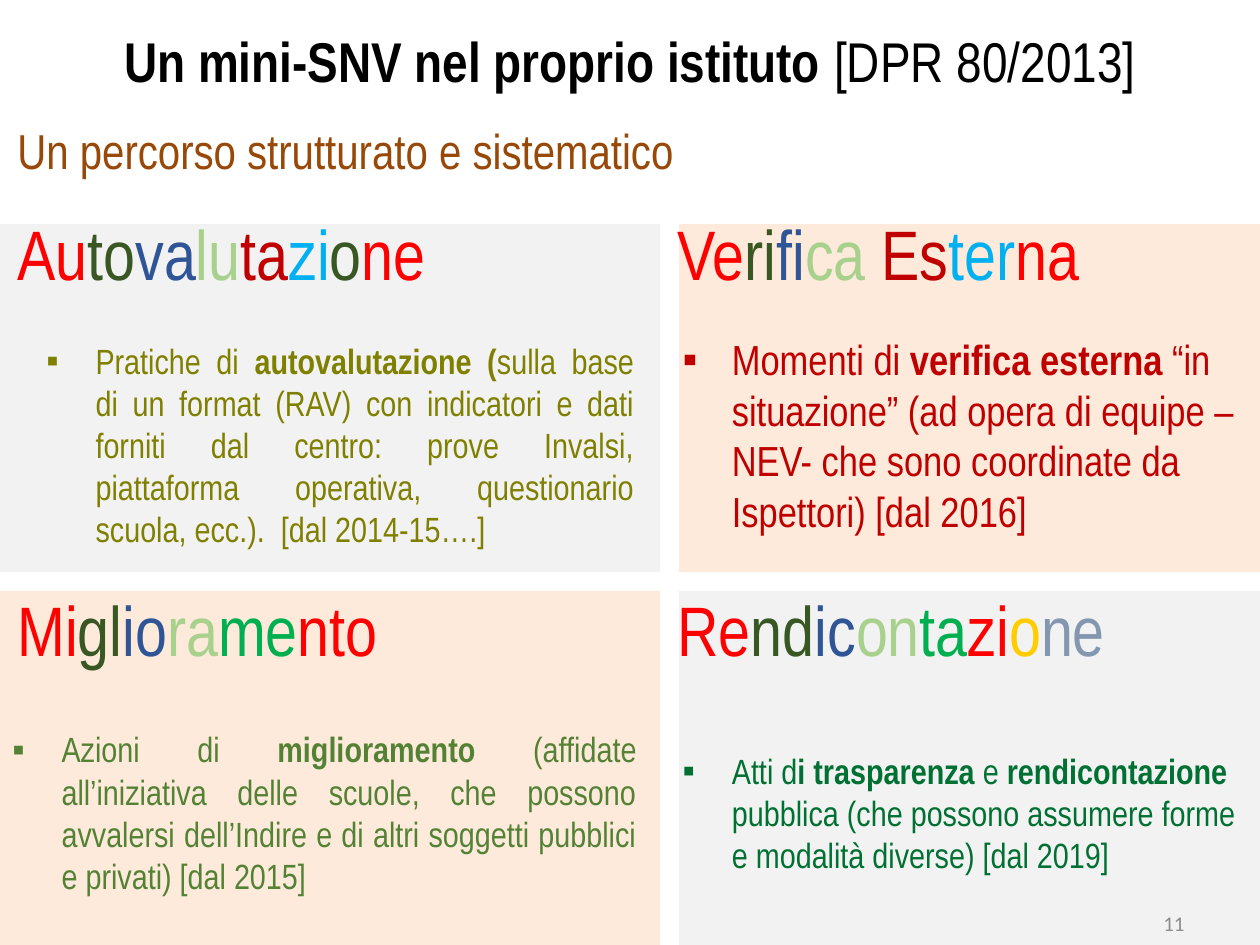
import pptx
import pptx.util
import pptx.dml.color
import pptx.enum.shapes
import pptx.enum.text
import pptx.oxml
import pptx.oxml.ns

Inch = pptx.util.Inches
Pt = pptx.util.Pt
ALIGN = pptx.enum.text.PP_ALIGN
ANCHOR = pptx.enum.text.MSO_ANCHOR

WIDE, HIGH, GAP = 10, 7.5, 0.15
TOP, LEFT, ROW = 1.78, 5.24, 2.76  # panel area top, first column, first row
GREY, PEACH = "F2F2F2", "FDEADA"
RED, PINE, NAVY, LIME = "FF0000", "385723", "2F5597", "A9D18E"
WINE, SKY, LEAF = "C00000", "00B0F0", "00B050"
HEAD = 0.77
NARROW = "Arial Narrow"

TITLE = [("Un mini-SNV nel proprio istituto ", True), ("[DPR 80/2013]", False)]
SUB = "Un percorso strutturato e sistematico"
PAGE = "11"

# Each panel: cell, heading pieces and colours, body box, body format, body runs
PANELS = [
    dict(cell=(0, 0), fill=GREY, head="Au|to|va|lu|ta|zi|o|ne",
         hues=[RED, PINE, NAVY, LIME, WINE, SKY, PINE, RED],
         box=(0.27, 2.47, 4.86, 2.12), size=20, hue="808000", align=ALIGN.JUSTIFY,
         body=[("Pratiche di ", False), ("autovalutazione (", True),
               ("sulla base di un format (RAV) con indicatori e dati forniti dal "
                "centro: prove Invalsi, piattaforma operativa, questionario scuola, "
                "ecc.).  [dal 2014-15….]", False)]),
    dict(cell=(1, 0), fill=PEACH, head="Ve|ri|fi|ca |Es|ter|na",
         hues=[RED, PINE, NAVY, LIME, WINE, SKY, RED],
         box=(5.32, 2.39, 4.57, 2.12), size=24, hue=WINE, align=ALIGN.LEFT,
         body=[("Momenti di ", False), ("verifica esterna", True),
               (" “in situazione” (ad opera di equipe –NEV- che sono coordinate da "
                "Ispettori) [dal 2016]", False)]),
    dict(cell=(0, 1), fill=PEACH, head="Mi|gl|io|ra|me|nto",
         hues=[RED, PINE, NAVY, LIME, LEAF, RED],
         box=(0, 5.73, 5.15, 1.43), size=20, hue="548235", align=ALIGN.JUSTIFY,
         body=[("Azioni di ", False), ("miglioramento ", True),
               ("(affidate all’iniziativa delle scuole, che possono avvalersi "
                "dell’Indire e di altri soggetti pubblici e privati) [dal 2015]", False)]),
    dict(cell=(1, 1), fill=GREY, head="Re|nd|ic|on|ta|zi|o|ne",
         hues=[RED, PINE, NAVY, LIME, LEAF, RED, "FFCC00", "8497B0"],
         box=(5.32, 5.73, 4.65, 1.43), size=20, hue="007033", align=ALIGN.LEFT,
         body=[("Atti d", False), ("i trasparenza", True), (" e ", False),
               ("rendicontazione", True),
               (" pubblica (che possono assumere forme e modalità diverse) [dal 2019]",
                False)]),
]


def rgb(code):
    return pptx.dml.color.RGBColor.from_string(code)


def write(slide, box, runs, size, align=ALIGN.LEFT, anchor=ANCHOR.TOP, face=NARROW):
    """Add a text box of (text, colour, bold) runs and return its paragraph."""
    frame = slide.shapes.add_textbox(*map(Inch, box)).text_frame
    for name, value in dict(word_wrap=True, vertical_anchor=anchor).items():
        setattr(frame, name, value)
    para = frame.paragraphs[0]
    para.alignment = align
    for text, hue, bold in runs:
        run = para.add_run()
        run.text = text
        for name, value in dict(name=face, size=Pt(size), bold=bold).items():
            setattr(run.font, name, value)
        run.font.color.rgb = rgb(hue)
    return para


def bullet(para):
    para.space_after = Pt(12)
    props = para._p.get_or_add_pPr()
    props.set("marL", str(Inch(0.39)))
    props.set("indent", str(Inch(-0.39)))
    for tag, key, value in [("buFont", "typeface", "Arial"), ("buChar", "char", "▪")]:
        item = pptx.oxml.parse_xml(f'<a:{tag} {pptx.oxml.ns.nsdecls("a")}/>')
        item.set(key, value)
        props.append(item)


def paint(slide, panel):
    """Draw the background of one panel."""
    col, row = panel["cell"]
    x, y = col * (LEFT + GAP), TOP + row * (ROW + GAP)
    wide = WIDE - x if col else LEFT
    high = HIGH - y if row else ROW
    rect = slide.shapes.add_shape(pptx.enum.shapes.MSO_SHAPE.RECTANGLE,
                                  *map(Inch, (x, y, wide, high)))
    rect.shadow.inherit = False
    rect.fill.solid()
    rect.fill.fore_color.rgb = rgb(panel["fill"])
    rect.line.fill.background()


def fill(slide, panel):
    """Write the bulleted body and the coloured heading of one panel."""
    col, row = panel["cell"]
    body = [(text, panel["hue"], bold) for text, bold in panel["body"]]
    bullet(write(slide, panel["box"], body, panel["size"], panel["align"], ANCHOR.MIDDLE))
    head = [(text, hue, False) for text, hue in zip(panel["head"].split("|"), panel["hues"])]
    write(slide, ((0.04, 5.28)[col], (1.62, 4.61)[row], 4.5, HEAD), head, 40)


def main():
    deck = pptx.Presentation()
    deck.slide_width, deck.slide_height = Inch(WIDE), Inch(HIGH)
    slide = deck.slides.add_slide(deck.slide_layouts[6])
    for panel in PANELS:
        paint(slide, panel)
    write(slide, (7.17, 7.13, 2.33, 0.4), [(PAGE, "8C8C8C", False)], 12,
          ALIGN.RIGHT, ANCHOR.MIDDLE, "Calibri")
    write(slide, (0, 0.05, WIDE, 0.85), [(text, "000000", bold) for text, bold in TITLE],
          32, ALIGN.CENTER, ANCHOR.MIDDLE)
    write(slide, (0.04, 0.91, 6.57, 0.57), [(SUB, "984807", False)], 28)
    for panel in PANELS:
        fill(slide, panel)
    deck.save("out.pptx")


if __name__ == "__main__":
    main()
